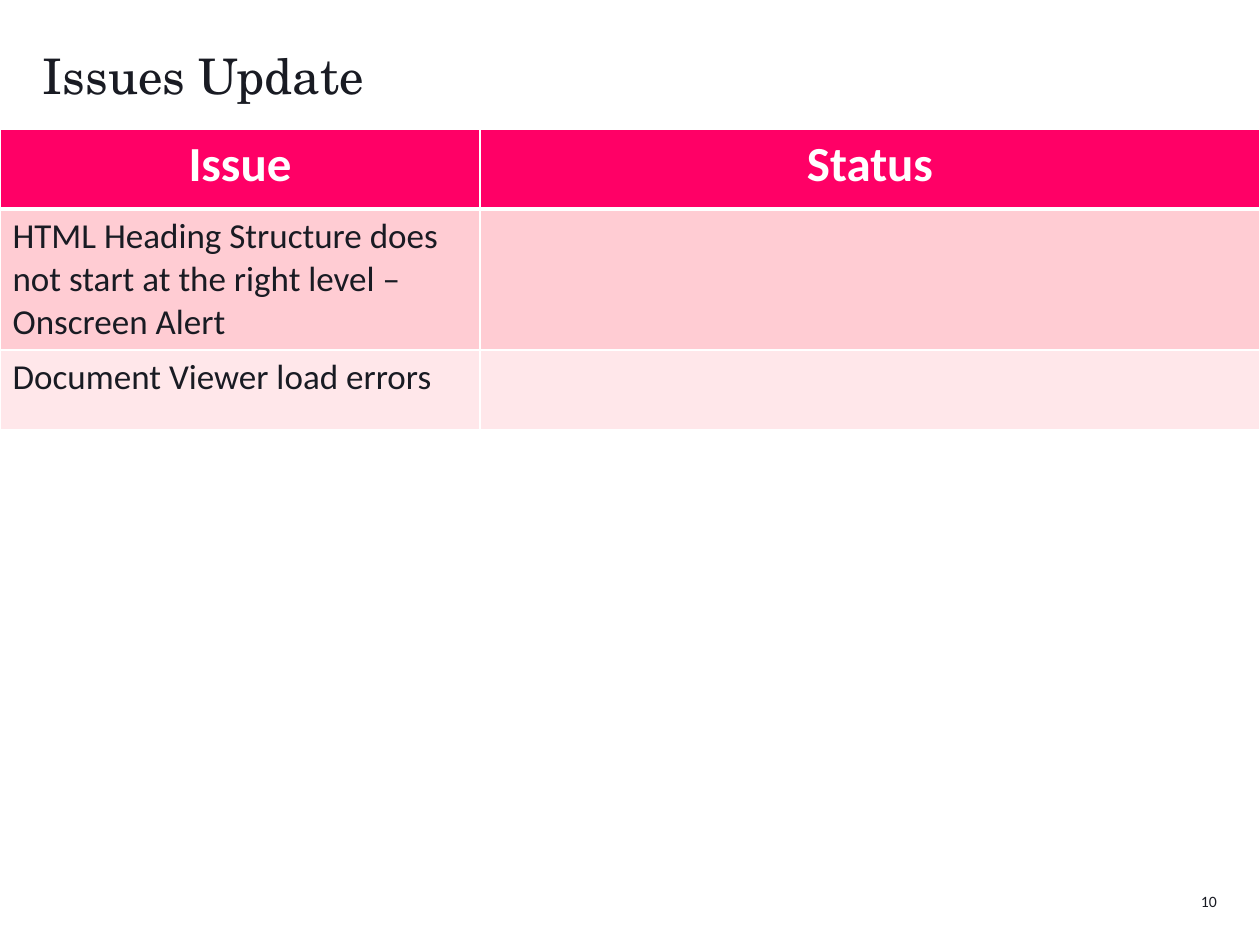
"""Build the Issues Update slide with its issue and status table."""
from lxml import etree
from pptx import Presentation
from pptx import util as u
from pptx.dml.color import RGBColor
from pptx.enum import text
from pptx.oxml import ns

PX = 914400 // 126
INK = RGBColor(0x19, 0x1B, 0x23)
WHITE = RGBColor(0xFF, 0xFF, 0xFF)
PINK = RGBColor(0xFF, 0x00, 0x66)
ROSE = RGBColor(0xFF, 0xCC, 0xD3)
BLUSH = RGBColor(0xFF, 0xE7, 0xEA)


def style_font(font, formats):
    for name, value in formats.items():
        if name == "color":
            font.color.rgb = value
        else:
            setattr(font, name, value)


def add_border(cell, side, points):
    line = etree.SubElement(cell._tc.get_or_add_tcPr(), ns.qn(f"a:ln{side}"), w=str(u.Pt(points)))
    fill = etree.SubElement(line, ns.qn("a:solidFill"))
    etree.SubElement(fill, ns.qn("a:srgbClr"), val=str(WHITE))


deck = Presentation()
deck.slide_width, deck.slide_height = u.Inches(10), u.Inches(7.5)
page = deck.slides.add_slide(deck.slide_layouts[6])

labels = [
    ("10", (1091, 876, 126, 50), False, text.MSO_ANCHOR.MIDDLE,
     {"alignment": text.PP_ALIGN.RIGHT},
     {"name": "Calibri", "size": u.Pt(9), "color": INK}),
    ("Issues Update", (43, 39, 1174, 66), True, text.MSO_ANCHOR.BOTTOM,
     {"line_spacing": 0.9},
     {"name": "TeX Gyre Schola", "size": u.Pt(28), "color": INK}),
]
for words, place, wrap, anchor, layout, formats in labels:
    frame = page.shapes.add_textbox(*(value * PX for value in place)).text_frame
    for side in ("left", "top", "right", "bottom"):
        setattr(frame, f"margin_{side}", 0)
    frame.word_wrap, frame.vertical_anchor = wrap, anchor
    para = frame.paragraphs[0]
    for name, value in layout.items():
        setattr(para, name, value)
    span = para.add_run()
    span.text = words
    style_font(span.font, formats)

header = {"name": "Calibri", "size": u.Pt(28), "bold": True, "color": WHITE}
body = {"name": "Calibri", "size": u.Pt(20), "bold": False, "color": INK}
rows = [
    (80, PINK, header, text.PP_ALIGN.CENTER, ("Issue", "Status")),
    (141, ROSE, body, text.PP_ALIGN.LEFT,
     ("HTML Heading Structure does not start at the right level – Onscreen Alert", "")),
    (80, BLUSH, body, text.PP_ALIGN.LEFT, ("Document Viewer load errors", "")),
]
widths = (480, 780)
height = sum(row[0] for row in rows)
table = page.shapes.add_table(
    len(rows), len(widths), 0, 129 * PX, sum(widths) * PX, height * PX).table
for column, width in zip(table.columns, widths):
    column.width = width * PX
for index, (height, color, formats, alignment, entries) in enumerate(rows):
    table.rows[index].height = height * PX
    for cell, words in zip(table.rows[index].cells, entries):
        for side in "LRTB":
            heavy = (index, side) in ((0, "B"), (1, "T"))
            add_border(cell, side, 3 if heavy else 1)
        cell.fill.solid()
        cell.fill.fore_color.rgb = color
        cell.text = words
        para = cell.text_frame.paragraphs[0]
        para.alignment = alignment
        for span in para.runs:
            style_font(span.font, formats)

deck.save("out.pptx")
